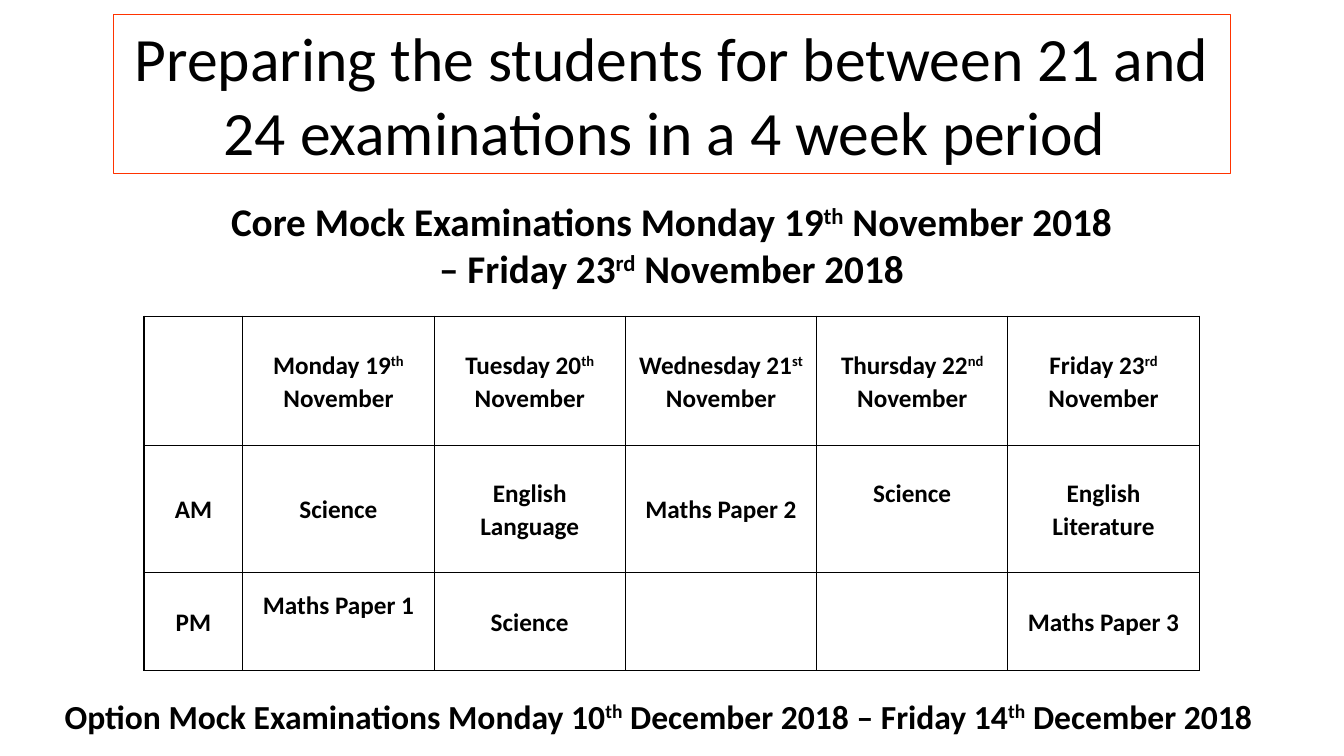
import lxml.etree
import pptx
import pptx.dml.color
import pptx.enum.text
import pptx.oxml.ns
import pptx.util
from pptx.util import Cm

# Text between carets is superscript.
TITLE = "Preparing the students for between 21 and 24 examinations in a 4 week period "
CORE = "Core Mock Examinations Monday 19^th^ November 2018 – Friday 23^rd^ November 2018"
OPTION = "Option Mock Examinations Monday 10^th^ December 2018 – Friday 14^th^ December 2018"
TIMETABLE = [
    ["", "Monday 19^th^ November", "Tuesday 20^th^ November", "Wednesday 21^st^ November",
     "Thursday 22^nd^ November", "Friday 23^rd^ November"],
    ["AM", "Science", "English Language", "Maths Paper 2", "Science", "English Literature"],
    ["PM", "Maths Paper 1", "Science", "", "", "Maths Paper 3"],
]
RAISED = {(1, 4), (2, 1)}  # row and column of entries set half a line higher
COLUMN_WIDTHS = [2.49] + [4.82] * 5
ROW_HEIGHTS = [3.26, 3.2, 2.46]
BLACK, WHITE, RED = "000000", "FFFFFF", "FF3300"


def colour(hex_code):
    return pptx.dml.color.RGBColor.from_string(hex_code)


def write(frame, text, size, bold=True, spacing=1.0):
    """Fill a text frame with one centred paragraph, raising the caret parts."""
    frame.word_wrap = True
    para = frame.paragraphs[0]
    para.alignment = pptx.enum.text.PP_ALIGN.CENTER
    para.line_spacing = spacing
    para.font.name = "Calibri"
    para.font.size = pptx.util.Pt(size)
    para.font.bold = bold
    para.font.color.rgb = colour(BLACK)
    for index, part in enumerate(text.split("^")):
        if part:
            span = para.add_run()
            span.text = part
            if index % 2:
                span._r.get_or_add_rPr().set("baseline", "30000")


def add_text(page, text, size, left, top, width, height):
    box = page.shapes.add_textbox(Cm(left), Cm(top), Cm(width), Cm(height))
    write(box.text_frame, text, size)


def outline(cell):
    properties = cell._tc.get_or_add_tcPr()
    for position, side in enumerate(("lnL", "lnR", "lnT", "lnB")):
        line = lxml.etree.Element(pptx.oxml.ns.qn("a:" + side), w=str(pptx.util.Pt(1)))
        fill = lxml.etree.SubElement(line, pptx.oxml.ns.qn("a:solidFill"))
        lxml.etree.SubElement(fill, pptx.oxml.ns.qn("a:srgbClr"), val=BLACK)
        properties.insert(position, line)


def add_timetable(page):
    frame = page.shapes.add_table(
        len(TIMETABLE), len(COLUMN_WIDTHS), Cm(3.63), Cm(7.97),
        Cm(sum(COLUMN_WIDTHS)), Cm(sum(ROW_HEIGHTS)))
    table = frame.table
    table.first_row = table.horz_banding = False
    for column, width in zip(table.columns, COLUMN_WIDTHS):
        column.width = Cm(width)
    for row, height in zip(table.rows, ROW_HEIGHTS):
        row.height = Cm(height)
    for r, entries in enumerate(TIMETABLE):
        for c, entry in enumerate(entries):
            cell = table.cell(r, c)
            cell.fill.solid()
            cell.fill.fore_color.rgb = colour(WHITE)
            cell.vertical_anchor = pptx.enum.text.MSO_ANCHOR.MIDDLE
            cell.margin_left = cell.margin_right = Cm(0.25)
            cell.margin_top = 0
            cell.margin_bottom = Cm(0.82 if (r, c) in RAISED else 0)
            write(cell.text_frame, entry, 18, spacing=1.07)
            outline(cell)


def main():
    deck = pptx.Presentation()
    deck.slide_width, deck.slide_height = Cm(33.87), Cm(19.05)
    page = deck.slides.add_slide(deck.slide_layouts[5])
    title = page.shapes.title
    title.left, title.top, title.width, title.height = Cm(2.87), Cm(0.36), Cm(28.14), Cm(4.01)
    title.line.color.rgb = colour(RED)
    title.line.width = pptx.util.Pt(0.75)
    write(title.text_frame, TITLE, 44, bold=False)
    add_timetable(page)
    add_text(page, CORE, 28, 5.26, 4.85, 23.32, 2.64)
    add_text(page, OPTION, 24, 0.51, 17.4, 32.16, 1.27)
    deck.save("out.pptx")


if __name__ == "__main__":
    main()
